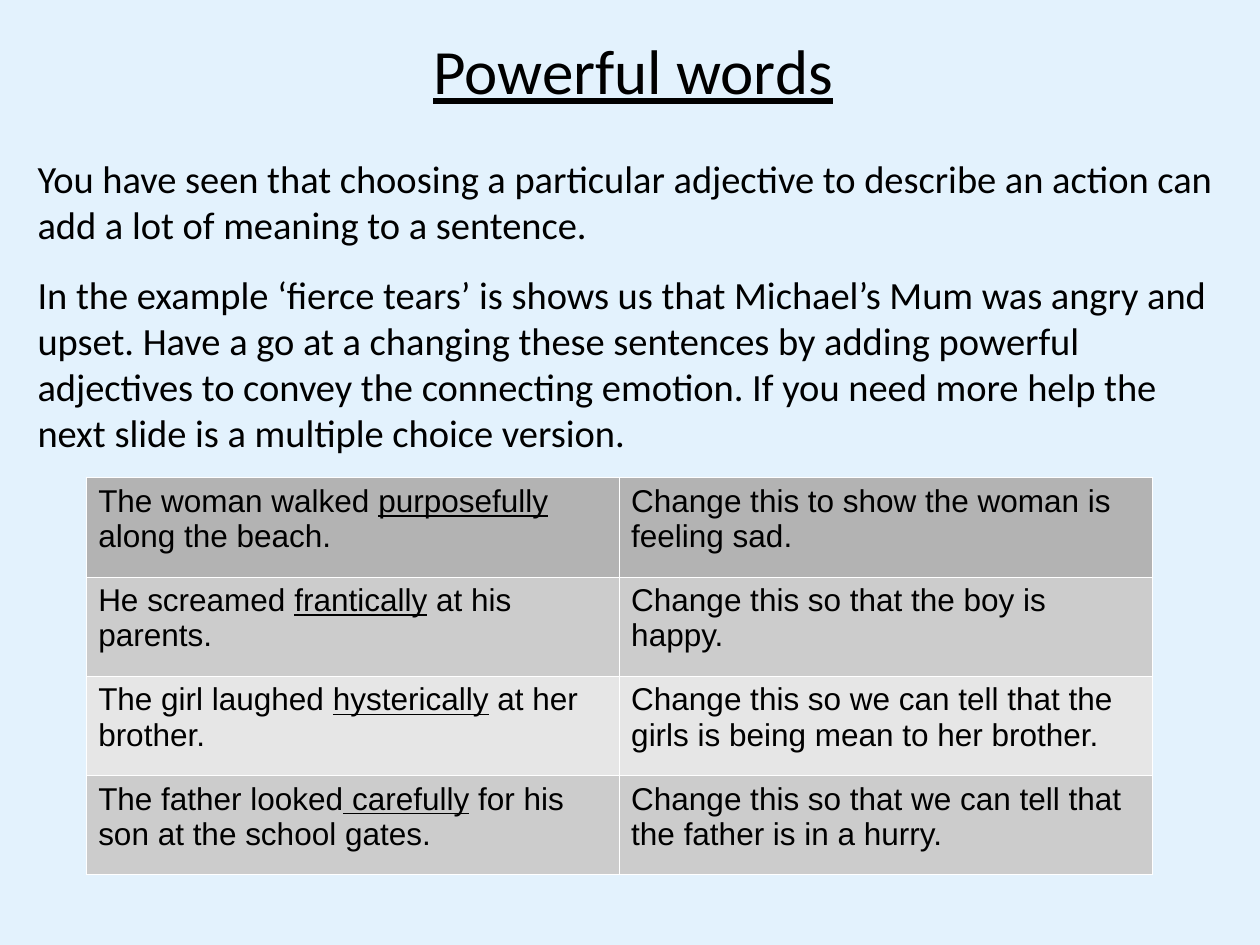
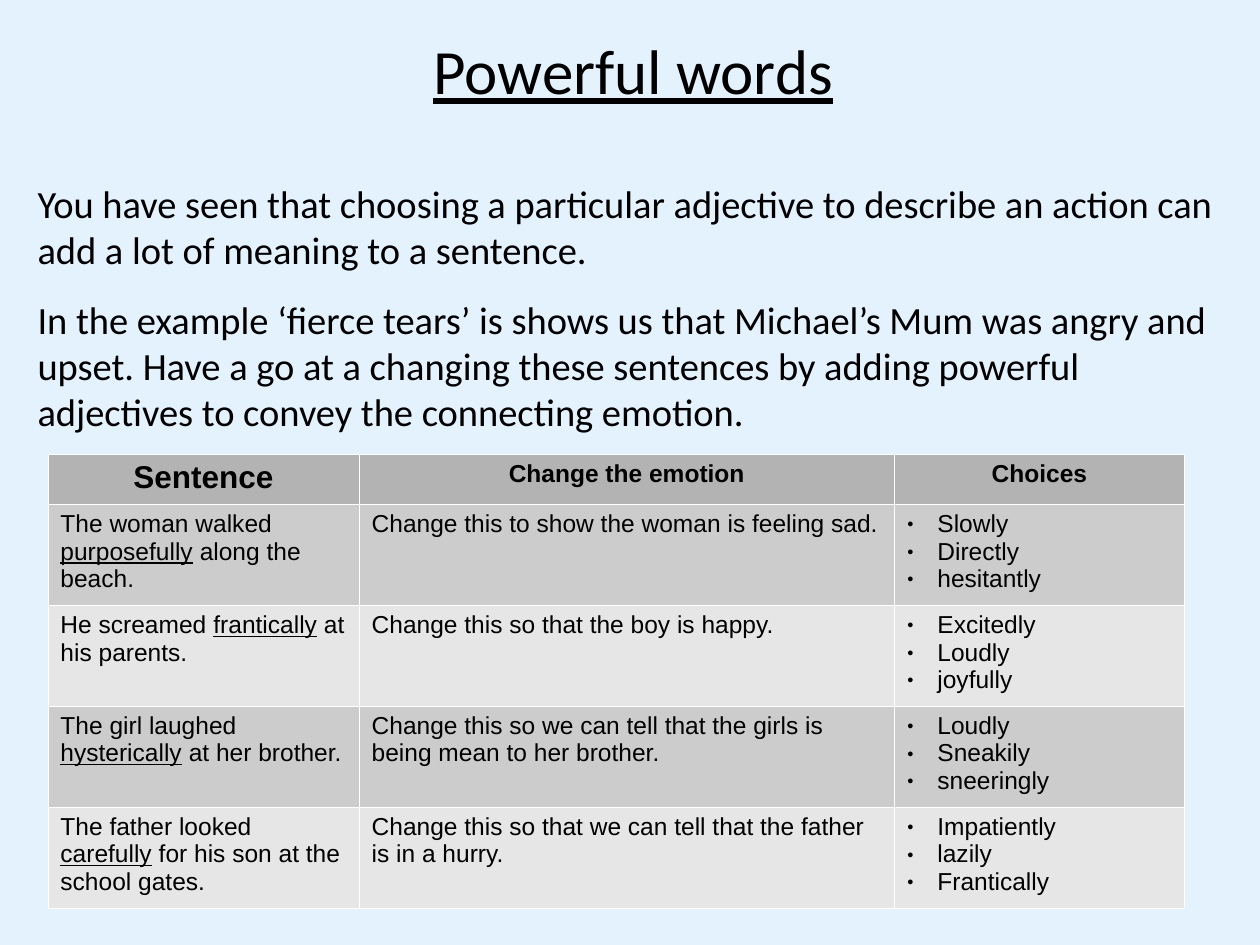
from dataclasses import dataclass

from lxml import etree
from pptx import Presentation
from pptx.dml.color import RGBColor
from pptx.enum.text import MSO_ANCHOR, MSO_AUTO_SIZE, PP_ALIGN
from pptx.oxml.ns import qn
from pptx.util import Inches, Pt

CENTER = PP_ALIGN.CENTER
LEFT = PP_ALIGN.LEFT
TOP = MSO_ANCHOR.TOP
FIT_SHAPE = MSO_AUTO_SIZE.SHAPE_TO_FIT_TEXT

TITLE = "Powerful words"
INTRO = (
    "You have seen that choosing a particular adjective to describe an action "
    "can add a lot of meaning to a sentence."
)
TASK = (
    "In the example ‘fierce tears’ is shows us that Michael’s Mum was angry and "
    "upset. Have a go at a changing these sentences by adding powerful "
    "adjectives to convey the connecting emotion."
)
HINT = " If you need more help the next slide is a multiple choice version."

SENTENCES = [
    ("The woman walked ", "purposefully", " along the beach."),
    ("He screamed ", "frantically", " at his parents."),
    ("The girl laughed ", "hysterically", " at her brother."),
    ("The father looked", " carefully", " for his son at the school gates."),
]
EMOTIONS = [
    "Change this to show the woman is feeling sad.",
    "Change this so that the boy is happy.",
    "Change this so we can tell that the girls is being mean to her brother.",
    "Change this so that we can tell that the father is in a hurry.",
]
CHOICES = [
    ["Slowly", "Directly", "hesitantly"],
    ["Excitedly", "Loudly", "joyfully"],
    ["Loudly", "Sneakily", "sneeringly"],
    ["Impatiently", "lazily", "Frantically"],
]
HEADINGS = [("Sentence", 18), ("Change the emotion", 14), ("Choices", 14)]


@dataclass(frozen=True)
class Theme:
    background: str = "E3F2FD"
    ink: str = "000000"
    rule: str = "FFFFFF"
    header_fill: str = "B3B3B3"
    band_fills: tuple = ("CCCCCC", "E6E6E6")
    text_font: str = "Calibri"
    table_font: str = "Arial"
    title_size: int = 36
    body_size: int = 22
    large_cell: int = 18
    small_cell: int = 14
    rule_width: float = 0.06
    bullet_indent: float = 0.24
    margin: float = 0.2
    inset_x: float = 0.1
    inset_y: float = 0.05


THEME = Theme()


def style(span, font, size, bold=False, underline=False):
    span.font.name = font
    span.font.size = Pt(size)
    span.font.bold = bold
    span.font.underline = underline
    span.font.color.rgb = RGBColor.from_string(THEME.ink)


def set_insets(target):
    target.margin_left = target.margin_right = Inches(THEME.inset_x)
    target.margin_top = target.margin_bottom = Inches(THEME.inset_y)
    target.vertical_anchor = TOP


def add_panel(page, left, top, width, height):
    right, bottom = left + width, top + height
    outline = page.shapes.build_freeform(Inches(left), Inches(top))
    corners = [(right, top), (right, bottom), (left, bottom)]
    outline.add_line_segments([(Inches(x), Inches(y)) for x, y in corners], close=True)
    panel = outline.convert_to_shape()
    panel.shadow.inherit = False
    panel.fill.background()
    panel.line.fill.background()
    return panel


def add_text(page, texts, top, width, height, size, align=LEFT, before=0.5, underline=False):
    frame = add_panel(page, THEME.margin, top, width, height).text_frame
    frame.text = "\n".join(texts)
    frame.word_wrap = True
    set_insets(frame)
    for para in frame.paragraphs:
        para.alignment = align
        para.space_before, para.space_after = Pt(before), Pt(0.5)
        for span in para.runs:
            style(span, THEME.text_font, size, underline=underline)
    return frame


def add_page(deck, texts, body_top, body_height):
    page = deck.slides.add_slide(deck.slide_layouts[6])
    page.background.fill.solid()
    page.background.fill.fore_color.rgb = RGBColor.from_string(THEME.background)
    body = add_text(page, texts, body_top, 9.53, body_height, THEME.body_size, before=13)
    body.auto_size = FIT_SHAPE
    add_text(page, [TITLE], 0.2, 9.65, 0.7, THEME.title_size, CENTER, underline=True)
    return page


def add_bullet(para):
    properties = para._p.get_or_add_pPr()
    indent = Inches(THEME.bullet_indent)
    properties.set("marL", str(indent))
    properties.set("indent", str(-indent))
    colour = etree.SubElement(properties, qn("a:buClr"))
    etree.SubElement(colour, qn("a:srgbClr"), val=THEME.ink)
    etree.SubElement(properties, qn("a:buSzPct"), val="45000")
    etree.SubElement(properties, qn("a:buFont"), typeface=THEME.table_font)
    etree.SubElement(properties, qn("a:buChar"), char="●")


def paint_cell(cell, fill):
    properties = cell._tc.get_or_add_tcPr()
    for side in ("lnL", "lnR", "lnT", "lnB"):
        line = etree.SubElement(properties, qn(f"a:{side}"), w=str(Pt(THEME.rule_width)))
        solid = etree.SubElement(line, qn("a:solidFill"))
        etree.SubElement(solid, qn("a:srgbClr"), val=THEME.rule)
    cell.fill.solid()
    cell.fill.fore_color.rgb = RGBColor.from_string(fill)
    set_insets(cell)


def write_cell(cell, content, size):
    frame = cell.text_frame
    if isinstance(content, tuple):
        for index, part in enumerate(content):
            span = frame.paragraphs[0].add_run()
            span.text = part
            style(span, THEME.table_font, size, underline=index == 1)
        return
    bulleted = isinstance(content, list)
    frame.text = "\n".join(content) if bulleted else content
    for para in frame.paragraphs:
        style(para.runs[0], THEME.table_font, size)
        if bulleted:
            add_bullet(para)


def write_heading(cell, text, size):
    cell.text_frame.text = text
    para = cell.text_frame.paragraphs[0]
    para.alignment = CENTER
    style(para.runs[0], THEME.table_font, size, bold=True)


def add_grid(page, rows, left, top, widths, heights, size, headings=()):
    row_total = len(heights)
    table = page.shapes.add_table(
        row_total, len(widths), Inches(left), Inches(top),
        Inches(sum(widths)), Inches(sum(heights)),
    ).table
    for column, width in zip(table.columns, widths):
        column.width = Inches(width)
    for row, height in zip(table.rows, heights):
        row.height = Inches(height)
    for row_index in range(row_total):
        fill = THEME.band_fills[(row_index - 1) % 2] if row_index else THEME.header_fill
        for cell in table.rows[row_index].cells:
            paint_cell(cell, fill)
    for column_index, (text, heading_size) in enumerate(headings):
        write_heading(table.cell(0, column_index), text, heading_size)
    for row_index, row in enumerate(rows, start=1 if headings else 0):
        for column_index, content in enumerate(row):
            write_cell(table.cell(row_index, column_index), content, size)


def main():
    deck = Presentation()
    deck.slide_width, deck.slide_height = Inches(10), Inches(7.5)

    open_page = add_page(deck, [INTRO, TASK + HINT], 1.18, 2.49)
    add_grid(
        open_page, list(zip(SENTENCES, EMOTIONS)), 0.68, 3.79,
        [4.23] * 2, [3.15 / 4] * 4, THEME.large_cell,
    )

    choice_page = add_page(deck, [INTRO, TASK], 1.38, 2.12)
    add_grid(
        choice_page, list(zip(SENTENCES, EMOTIONS, CHOICES)), 0.38, 3.6,
        [2.47, 4.25, 2.3], [0.4] + [0.8] * 4, THEME.small_cell, HEADINGS,
    )
    deck.save("out.pptx")


if __name__ == "__main__":
    main()
